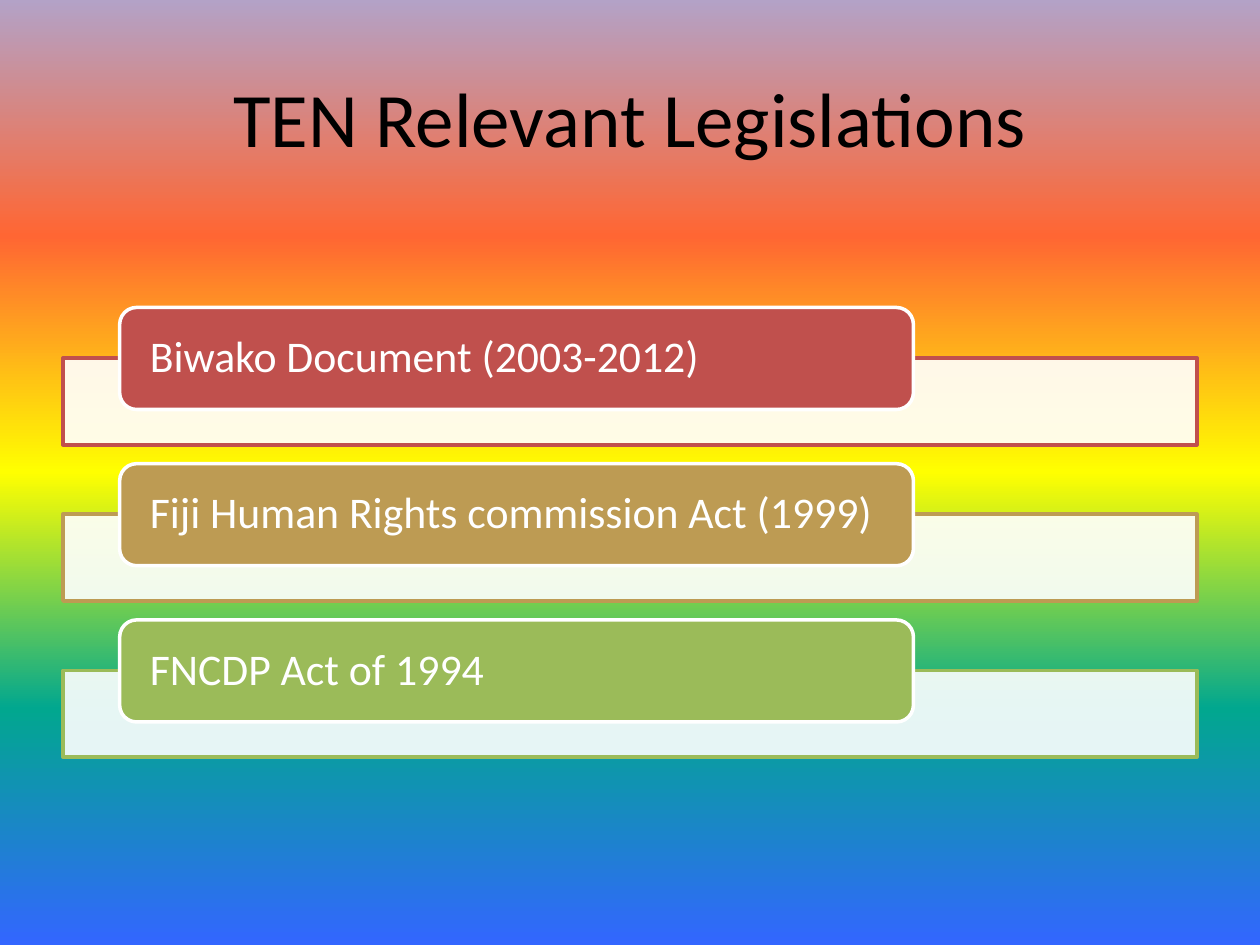
import lxml.etree
import pptx
import pptx.dml.color
import pptx.enum.shapes
import pptx.enum.text
import pptx.oxml.ns
import pptx.util

Inches = pptx.util.Inches
Pt = pptx.util.Pt
SHAPE = pptx.enum.shapes.MSO_SHAPE
ALIGN = pptx.enum.text.PP_ALIGN
qn = pptx.oxml.ns.qn

FONT = "Calibri"
MARGIN, CONTENT_W = 0.5, 9
FIRST_TOP, ROW_STEP = 2.44, 1.24
LABEL_INDENT, LABEL_W, LABEL_H = 0.45, 6.3, 0.81
BAR_DROP, BAR_H = 0.4, 0.69
RAINBOW = ["B3A2C7", "FF6633", "FFFF00", "01A78F", "3366FF"]
ACTS = [
    ("Biwako Document (2003-2012)", "C0504D"),
    ("Fiji Human Rights commission Act (1999)", "BD9B53"),
    ("FNCDP Act of 1994", "9BBB59"),
]


def rgb(color):
    return pptx.dml.color.RGBColor.from_string(color)


def add_xml(parent, tag, **attrs):
    child = lxml.etree.SubElement(parent, qn(tag))
    for name, value in attrs.items():
        child.set(name, str(value))
    return child


def set_background(slide, colors):
    """Fill the background from top to bottom with evenly spaced colours."""
    fill = slide.background.fill
    fill.gradient()
    fill.gradient_angle = 270
    stops = next(slide.element.iter(qn("a:gsLst")))
    for stop in list(stops):
        stops.remove(stop)
    for i, color in enumerate(colors):
        stop = add_xml(stops, "a:gs", pos=i * 100000 // (len(colors) - 1))
        add_xml(stop, "a:srgbClr", val=color)


def set_text(tf, text, size, color, align=ALIGN.LEFT, spacing=None):
    tf.word_wrap = True
    tf.vertical_anchor = pptx.enum.text.MSO_ANCHOR.MIDDLE
    p = tf.paragraphs[0]
    p.alignment = align
    p.line_spacing = spacing
    r = p.add_run()
    r.text = text
    r.font.name = FONT
    r.font.size = Pt(size)
    r.font.color.rgb = rgb(color)


def add_box(slide, kind, left, top, width, height, fill, line, opacity=100):
    sp = slide.shapes.add_shape(kind, *map(Inches, (left, top, width, height)))
    sp.shadow.inherit = False
    sp.fill.solid()
    sp.fill.fore_color.rgb = rgb(fill)
    sp.line.color.rgb = rgb(line)
    sp.line.width = Pt(2)
    if opacity < 100:
        color = sp.element.spPr.find(qn("a:solidFill")).find(qn("a:srgbClr"))
        add_xml(color, "a:alpha", val=opacity * 1000)
    return sp


def add_title(slide, text):
    title = slide.shapes.title
    title.left, title.top = Inches(MARGIN), Inches(0.3)
    title.width, title.height = Inches(CONTENT_W), Inches(1.25)
    set_text(title.text_frame, text, 44, "000000", align=ALIGN.CENTER)


def add_act(slide, row, text, color):
    """Add a pale bar with a coloured label overlapping its top edge."""
    top = FIRST_TOP + row * ROW_STEP
    add_box(slide, SHAPE.RECTANGLE, MARGIN, top + BAR_DROP, CONTENT_W, BAR_H,
            "FFFFFF", color, opacity=90)
    label = add_box(slide, SHAPE.ROUNDED_RECTANGLE, MARGIN + LABEL_INDENT, top,
                    LABEL_W, LABEL_H, color, "FFFFFF")
    tf = label.text_frame
    tf.margin_left = tf.margin_right = Inches(0.2)
    tf.margin_top = tf.margin_bottom = 0
    set_text(tf, text, 25, "FFFFFF", spacing=0.9)


def main():
    prs = pptx.Presentation()
    prs.slide_width, prs.slide_height = Inches(10), Inches(7.5)
    slide = prs.slides.add_slide(prs.slide_layouts[5])
    set_background(slide, RAINBOW)
    add_title(slide, "TEN Relevant Legislations")
    for row, (text, color) in enumerate(ACTS):
        add_act(slide, row, text, color)
    prs.save("out.pptx")


if __name__ == "__main__":
    main()
